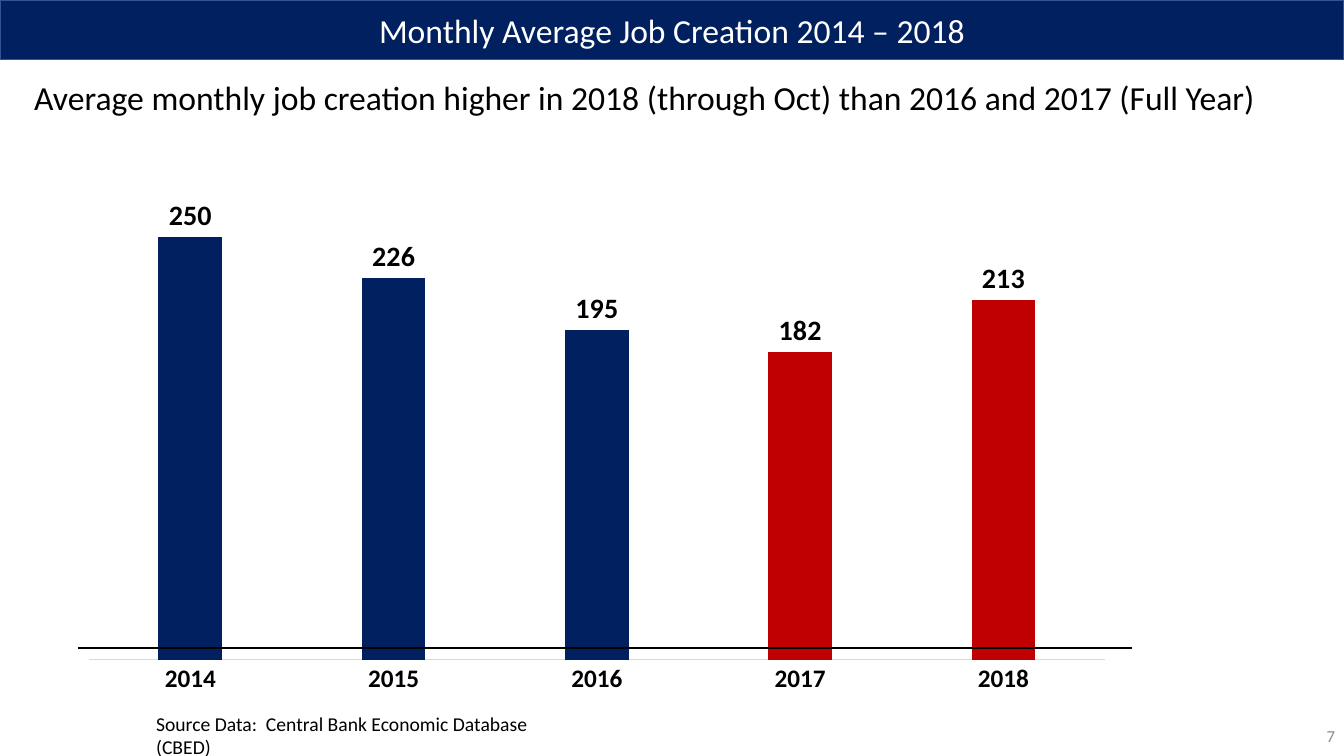
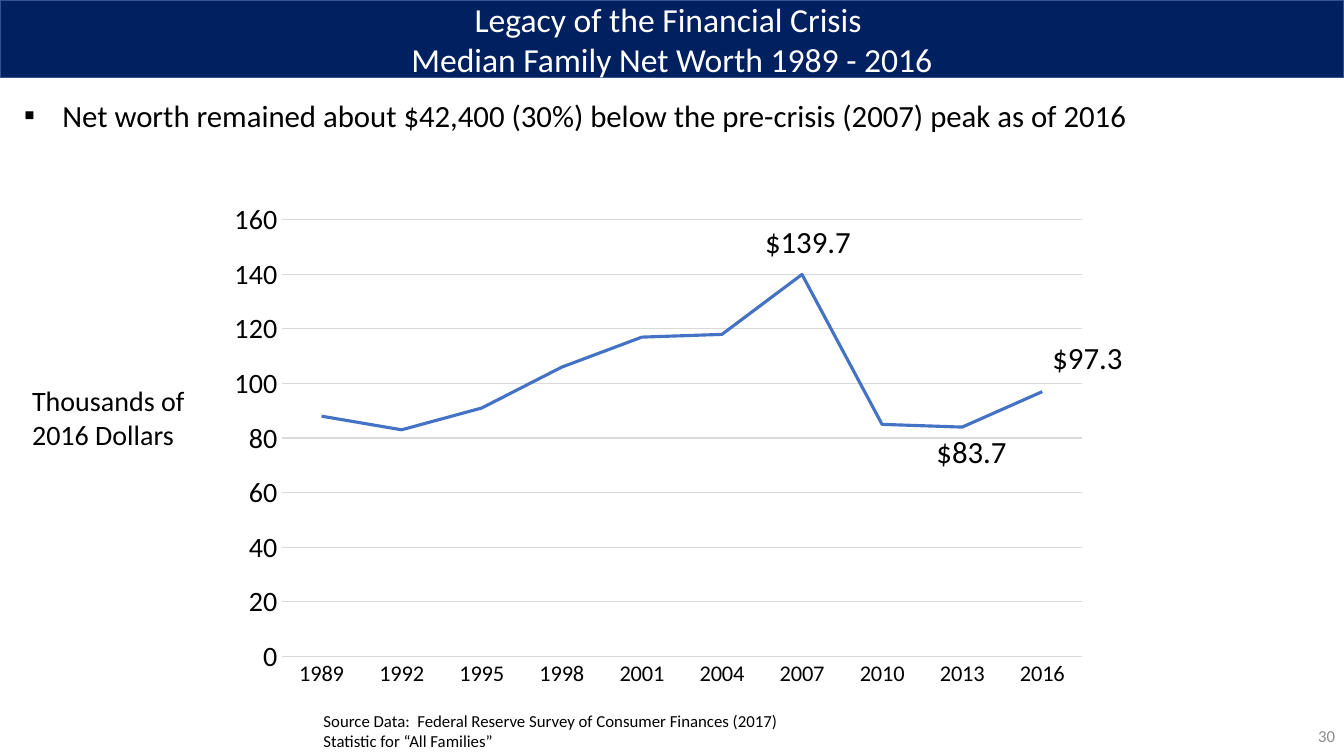
from lxml.etree import SubElement
from pptx import Presentation
from pptx.chart.data import CategoryChartData
from pptx.dml.color import RGBColor
from pptx.enum.chart import XL_CHART_TYPE, XL_LABEL_POSITION, XL_TICK_MARK
from pptx.enum.shapes import MSO_CONNECTOR, MSO_SHAPE
from pptx.enum.text import MSO_ANCHOR, MSO_AUTO_SIZE, PP_ALIGN
from pptx.oxml.ns import qn
from pptx.util import Pt

PX = 9144  # one px is a hundredth of an inch
PAGE_WIDTH, PAGE_HEIGHT = 1333, 750
FONT = "Calibri"
COLORS = {
    "navy": "002060",
    "band_edge": "325491",
    "red": "C00000",
    "blue": "4472C4",
    "grid": "D9D9D9",
    "number": "8C8C8C",
    "text": "000000",
    "white": "FFFFFF",
}


def rgb(name):
    return RGBColor.from_string(COLORS[name])


def emu(*lengths):
    return [length * PX for length in lengths]


def style_font(font, size, color="text", bold=False):
    font.name, font.size, font.bold = FONT, Pt(size), bold
    font.color.rgb = rgb(color)


def style_line(line, color, width):
    line.color.rgb = rgb(color)
    line.width = Pt(width)


def write(frame, text, size, color="text", align=PP_ALIGN.LEFT):
    frame.text = text
    for para in frame.paragraphs:
        para.alignment = align
        for span in para.runs:
            style_font(span.font, size, color)


def add_title_band(page, text, height):
    band = page.shapes.add_shape(MSO_SHAPE.RECTANGLE, *emu(0, 0, PAGE_WIDTH, height))
    band.shadow.inherit = False
    band.fill.solid()
    band.fill.fore_color.rgb = rgb("navy")
    style_line(band.line, "band_edge", 1)
    band.text_frame.vertical_anchor = MSO_ANCHOR.MIDDLE
    write(band.text_frame, text, 24, "white", PP_ALIGN.CENTER)


def add_label(page, text, place, size):
    """Add a text box that grows with its unwrapped text."""
    box = page.shapes.add_textbox(*emu(*place))
    write(box.text_frame, text, size)
    box.text_frame.word_wrap = False
    box.text_frame.auto_size = MSO_AUTO_SIZE.SHAPE_TO_FIT_TEXT
    return box


def add_bullet(para, indent):
    properties = para._p.get_or_add_pPr()
    properties.set("marL", str(indent * PX))
    properties.set("indent", str(-indent * PX))
    SubElement(properties, qn("a:buFont"), typeface=FONT)
    SubElement(properties, qn("a:buChar"), char="▪")


def add_page_number(page, number):
    box = page.shapes.add_textbox(*emu(1258, 710, 76, 40))
    box.text_frame.word_wrap = True
    box.text_frame.vertical_anchor = MSO_ANCHOR.MIDDLE
    write(box.text_frame, str(number), 12, "number", PP_ALIGN.RIGHT)


def add_rule(page, left, right, top):
    rule = page.shapes.add_connector(MSO_CONNECTOR.STRAIGHT, *emu(left, top, right, top))
    style_line(rule.line, "text", 1)
    SubElement(rule._element.spPr, qn("a:effectLst"))


def add_chart(page, kind, place, values, category_size, bold=False):
    """Add a one-series chart from a dict of category to value."""
    chart_data = CategoryChartData()
    chart_data.categories = list(values)
    chart_data.add_series("Series 1", list(values.values()))
    chart = page.shapes.add_chart(kind, *emu(*place), chart_data).chart
    chart.has_title = chart.has_legend = False
    style_font(chart.font, 10)
    chart.plots[0].vary_by_categories = False
    for axis in (chart.category_axis, chart.value_axis):
        axis.major_tick_mark = axis.minor_tick_mark = XL_TICK_MARK.NONE
    style_font(chart.category_axis.tick_labels.font, category_size, bold=bold)
    style_line(chart.category_axis.format.line, "grid", 0.75)
    chart.value_axis.minimum_scale = 0
    return chart


def add_job_columns(page, place, values, red_years):
    chart = add_chart(page, XL_CHART_TYPE.COLUMN_CLUSTERED, place, values, 18, bold=True)
    axis = chart.value_axis
    axis.visible = axis.has_major_gridlines = False
    axis.maximum_scale = 300
    plot = chart.plots[0]
    plot.gap_width, plot.overlap = 219, -27
    plot.has_data_labels = True
    labels = plot.data_labels
    labels.show_value = True
    labels.position = XL_LABEL_POSITION.OUTSIDE_END
    style_font(labels.font, 20, bold=True)
    columns = plot.series[0]
    columns.format.fill.solid()
    columns.format.fill.fore_color.rgb = rgb("navy")
    for index, year in enumerate(values):
        if year in red_years:
            fill = columns.points[index].format.fill
            fill.solid()
            fill.fore_color.rgb = rgb("red")


def add_worth_line(page, place, values):
    chart = add_chart(page, XL_CHART_TYPE.LINE, place, values, 16)
    axis = chart.value_axis
    axis.maximum_scale, axis.major_unit = 160, 20
    axis.format.line.fill.background()
    style_line(axis.major_gridlines.format.line, "grid", 0.75)
    style_font(axis.tick_labels.font, 20)
    axis.tick_labels.number_format = "#,##0"
    axis.tick_labels.number_format_is_linked = False
    worth = chart.plots[0].series[0]
    worth.smooth = False
    style_line(worth.format.line, "blue", 2.25)


def build_jobs_page(page):
    add_title_band(page, "Monthly Average Job Creation 2014 – 2018", 59)
    add_page_number(page, 7)
    add_label(page, "Source Data:  Central Bank Economic Database (CBED)", (145, 701, 437, 34), 14)
    add_label(
        page,
        "Average monthly job creation higher in 2018 (through Oct) than 2016 and 2017 (Full Year)",
        (24, 71, 1242, 50),
        24,
    )
    jobs = {"2014": 250, "2015": 226, "2016": 195, "2017": 182, "2018": 213}
    add_job_columns(page, (67, 140, 1050, 560), jobs, {"2017", "2018"})
    add_rule(page, 77, 1123, 643)


def build_worth_page(page):
    add_title_band(
        page, "Legacy of the Financial Crisis \nMedian Family Net Worth 1989 - 2016", 77
    )
    finding = add_label(
        page,
        "Net worth remained about $42,400 (30%) below the pre-crisis (2007) peak as of 2016",
        (14, 91, 1125, 47),
        22,
    )
    add_bullet(finding.text_frame.paragraphs[0], 38)
    add_label(
        page,
        "Source Data:  Federal Reserve Survey of Consumer Finances (2017)\n"
        "Statistic for “All Families”",
        (311, 700, 479, 50),
        12,
    )
    add_label(page, "Thousands of\n2016 Dollars", (22, 376, 173, 77), 20)
    add_page_number(page, 30)
    years = [str(year) for year in range(1989, 2017, 3)]
    worth = dict(zip(years, [88, 83, 91, 106, 117, 118, 140, 85, 84, 97]))
    add_worth_line(page, (215, 191, 876, 501), worth)
    for text, left, top, width in (
        ("$139.7", 749, 216, 106),
        ("$83.7", 919, 424, 90),
        ("$97.3", 1034, 331, 90),
    ):
        add_label(page, text, (left, top, width, 47), 22)


def main():
    deck = Presentation()
    deck.slide_width, deck.slide_height = emu(PAGE_WIDTH, PAGE_HEIGHT)
    for build in (build_jobs_page, build_worth_page):
        build(deck.slides.add_slide(deck.slide_layouts[6]))
    deck.save("out.pptx")


if __name__ == "__main__":
    main()
